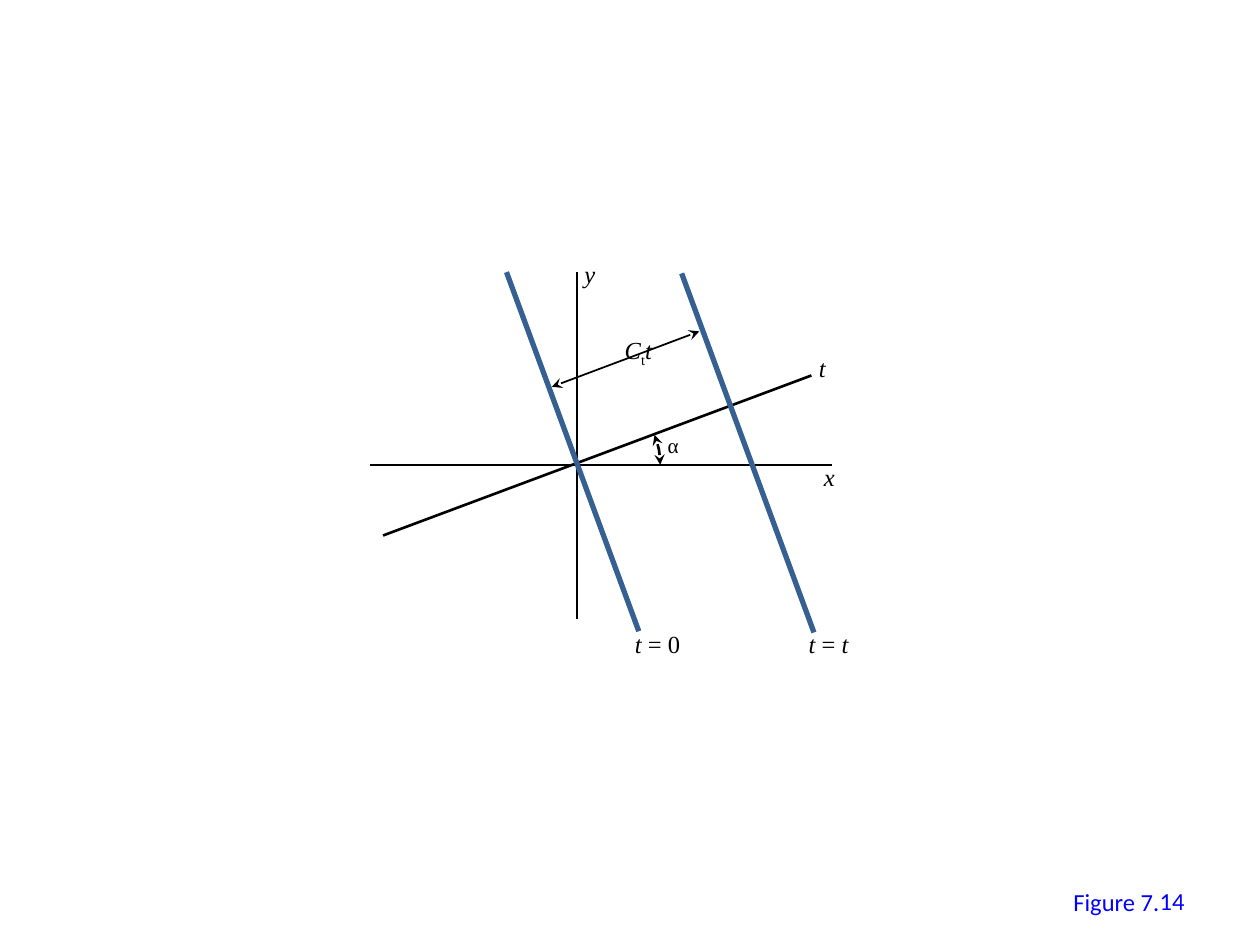
"""Build Figure 7.14: a plane front moving along the t axis at angle alpha."""
from lxml.etree import SubElement
from pptx import Presentation
from pptx.dml.color import RGBColor as Rgb
from pptx.enum.shapes import MSO_CONNECTOR as Connector, MSO_SHAPE as Shape
from pptx.enum.text import MSO_ANCHOR as Anchor, MSO_AUTO_SIZE as AutoSize, PP_ALIGN as Align
from pptx.oxml.ns import qn
from pptx.util import Inches, Pt

THEME = {
    "ink": Rgb.from_string("000000"),
    "front": Rgb.from_string("376092"),
    "caption": Rgb.from_string("0000FF"),
    "math_font": "Times New Roman",
    "caption_font": "Calibri",
    "text": 14,
    "angle": 12,
    "thin": 1,
    "axis": 1.5,
    "thick": 3,
}

LINES = [
    ((6.44, 2.98), (3.04, 4.25), "ink", "axis", False),
    ((6.6, 3.69), (2.94, 3.69), "ink", "axis", False),
    ((4.58, 2.16), (4.58, 4.91), "ink", "axis", False),
    ((4.02, 2.16), (5.07, 5.01), "front", "thick", False),
    ((5.41, 2.17), (6.46, 5.02), "front", "thick", False),
    ((4.38, 3.07), (5.55, 2.63), "ink", "thin", True),
]

ARC_BOX = (3.94, 3.04, 1.3, 1.3)
ARC_DEGREES = (338.53, 359.93)
ARC_UNITS_PER_DEGREE = 0.6

LABELS = [
    ((5.2, 3.38, 0.3, 0.3), "angle", [("α", "plain")]),
    ((4.86, 2.61, 0.49, 0.34), "text", [("C", "italic"), ("t", "subscript"), ("t", "italic")]),
    ((6.44, 3.62, 0.34, 0.34), "text", [("x", "italic")]),
    ((4.54, 2.01, 0.34, 0.34), "text", [("y", "italic")]),
    ((6.4, 2.75, 0.31, 0.34), "text", [("t", "italic")]),
    ((4.94, 4.94, 0.62, 0.34), "text", [("t", "italic"), (" = 0", "plain")]),
    ((6.32, 4.94, 0.57, 0.34), "text", [("t", "italic"), (" = ", "plain"), ("t", "italic")]),
]

CAPTION = ((8.42, 6.99, 0.89, 0.34), "Figure 7.")
NUMBER = ((7.17, 6.95, 2.33, 0.4), "14")


def style_line(shape, color, width, arrows):
    shape.line.color.rgb = THEME[color]
    shape.line.width = Pt(THEME[width])
    if arrows:
        outline = shape.line._get_or_add_ln()
        for end in ("a:headEnd", "a:tailEnd"):
            SubElement(outline, qn(end), type="stealth")


def add_line(slide, start, end, color, width, arrows):
    line = slide.shapes.add_connector(
        Connector.STRAIGHT, *(Inches(value) for value in start + end))
    style_line(line, color, width, arrows)
    SubElement(line._element.spPr, qn("a:effectLst"))


def add_angle_arc(slide):
    arc = slide.shapes.add_shape(Shape.ARC, *(Inches(value) for value in ARC_BOX))
    for index, degrees in enumerate(ARC_DEGREES):
        arc.adjustments[index] = degrees * ARC_UNITS_PER_DEGREE
    arc.fill.background()
    arc.shadow.inherit = False
    style_line(arc, "ink", "axis", True)


def add_text(slide, place, spans, size="text", font="math_font", color="ink"):
    box = slide.shapes.add_textbox(*(Inches(value) for value in place))
    frame = box.text_frame
    frame.word_wrap = False
    frame.auto_size = AutoSize.SHAPE_TO_FIT_TEXT
    para = frame.paragraphs[0]
    for text, style in spans:
        span = para.add_run()
        span.text = text
        span.font.name = THEME[font]
        span.font.size = Pt(THEME[size])
        span.font.color.rgb = THEME[color]
        span.font.italic = style == "italic"
        if style == "subscript":
            span.font._element.set("baseline", "-25000")
    return frame


def add_caption(slide):
    look = {"font": "caption_font", "color": "caption"}
    place, text = CAPTION
    add_text(slide, place, [(text, "plain")], **look)
    place, text = NUMBER
    frame = add_text(slide, place, [(text, "plain")], **look)
    frame.word_wrap = True
    frame.auto_size = AutoSize.NONE
    frame.vertical_anchor = Anchor.MIDDLE
    frame.paragraphs[0].alignment = Align.RIGHT


def main():
    deck = Presentation()
    deck.slide_width, deck.slide_height = Inches(10), Inches(7.5)
    slide = deck.slides.add_slide(deck.slide_layouts.get_by_name("Blank"))
    for line in LINES:
        add_line(slide, *line)
    add_angle_arc(slide)
    for place, size, spans in LABELS:
        add_text(slide, place, spans, size)
    add_caption(slide)
    deck.save("out.pptx")


if __name__ == "__main__":
    main()
